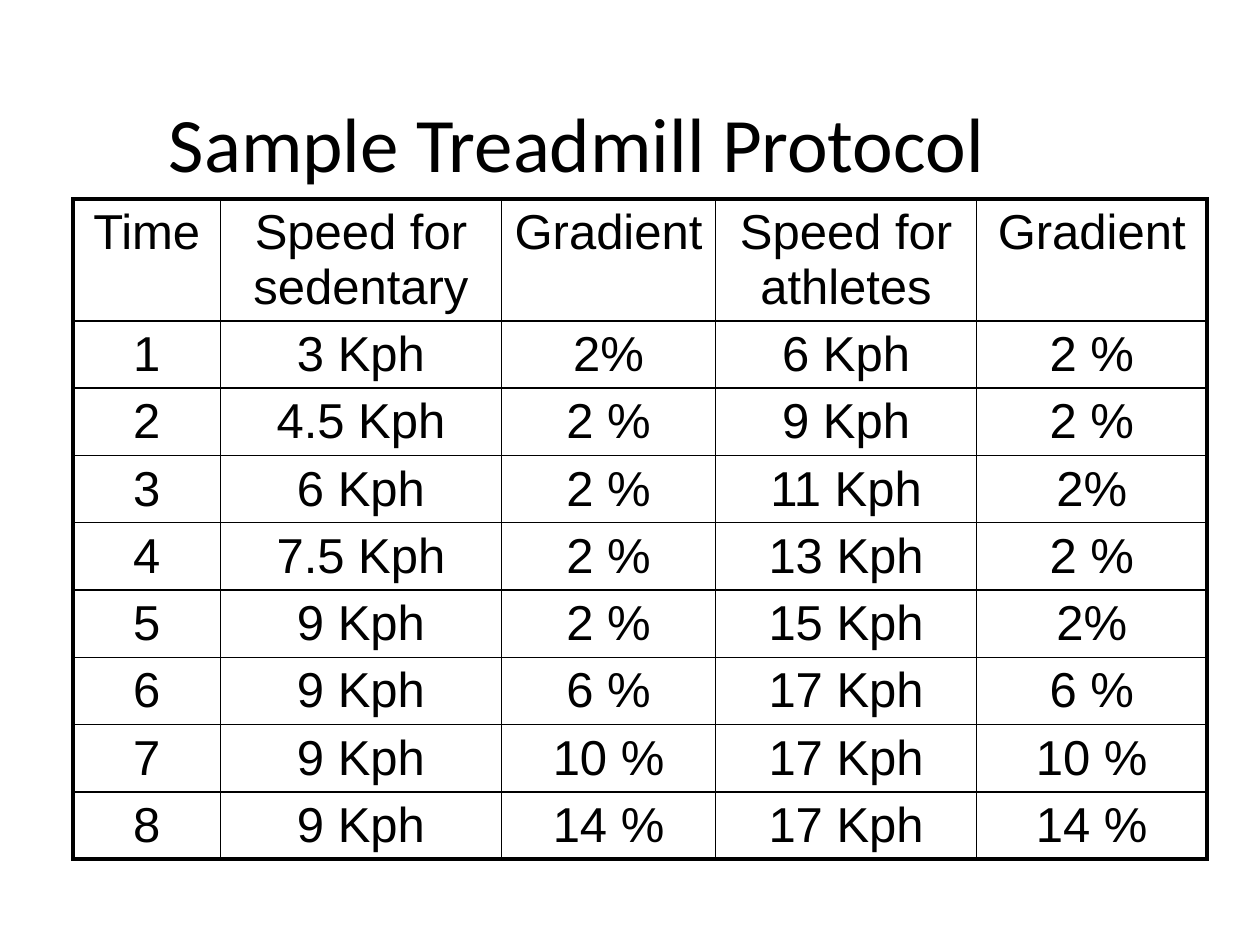
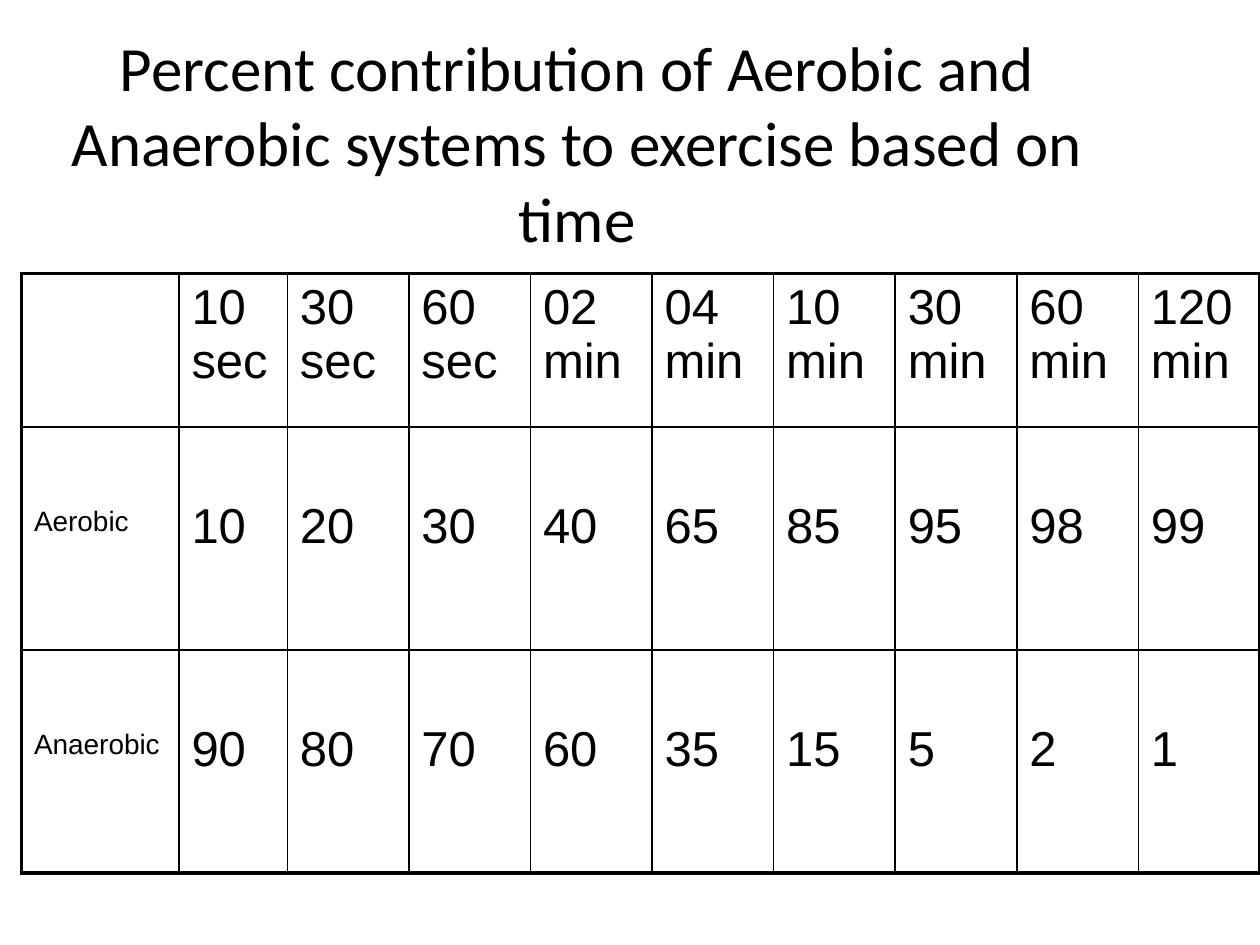
from lxml import etree
from pptx import Presentation
from pptx.dml.color import RGBColor
from pptx.enum.text import MSO_ANCHOR, MSO_AUTO_SIZE, PP_ALIGN
from pptx.oxml.ns import qn
from pptx.util import Inches, Pt

CENTER = PP_ALIGN.CENTER
LEFT = PP_ALIGN.LEFT
MIDDLE = MSO_ANCHOR.MIDDLE
NO_AUTOFIT = MSO_AUTO_SIZE.NONE
TITLE_ONLY = 5

BLACK = "000000"
WHITE = "FFFFFF"
TITLE_FONT = "Calibri"
TABLE_FONT = "Arial"
THICK = 2.25
THIN = 1

PROTOCOL = [
    ["Time", "Speed for sedentary", "Gradient", "Speed for athletes", "Gradient"],
    ["1", "3 Kph", "2%", "6 Kph", "2 %"],
    ["2", "4.5 Kph", "2 %", "9 Kph", "2 %"],
    ["3", "6 Kph", "2 %", "11 Kph", "2%"],
    ["4", "7.5 Kph", "2 %", "13 Kph", "2 %"],
    ["5", "9 Kph", "2 %", "15 Kph", "2%"],
    ["6", "9 Kph", "6 %", "17 Kph", "6 %"],
    ["7", "9 Kph", "10 %", "17 Kph", "10 %"],
    ["8", "9 Kph", "14 %", "17 Kph", "14 %"],
]

CONTRIBUTION = [
    ["", "10 sec", "30 sec", "60 sec", "02 min", "04 min", "10 min", "30 min", "60 min", "120 min"],
    ["Aerobic", "10", "20", "30", "40", "65", "85", "95", "98", "99"],
    ["Anaerobic", "90", "80", "70", "60", "35", "15", "5", "2", "1"],
]


def color(value):
    return RGBColor.from_string(value)


def write_text(text_frame, text, font=TABLE_FONT, size=28, fill=BLACK, align=LEFT):
    paragraph = text_frame.paragraphs[0]
    paragraph.alignment = align
    if text:
        run = paragraph.add_run()
        run.text = text
        run.font.name = font
        run.font.size = Pt(size)
        run.font.color.rgb = color(fill)


def draw_borders(cell, widths):
    properties = cell._tc.get_or_add_tcPr()
    for side, width in widths.items():
        line = etree.SubElement(properties, qn(f"a:ln{side}"), w=str(Pt(width)))
        fill = etree.SubElement(line, qn("a:solidFill"))
        etree.SubElement(fill, qn("a:srgbClr"), val=BLACK)


class Deck:
    def __init__(self):
        self.presentation = Presentation()
        self.presentation.slide_width = Inches(10)
        self.presentation.slide_height = Inches(7.5)
        self.slide = None

    def add_slide(self, title, title_size):
        layout = self.presentation.slide_layouts[TITLE_ONLY]
        self.slide = self.presentation.slides.add_slide(layout)
        background = self.slide.background.fill
        background.solid()
        background.fore_color.rgb = color(WHITE)
        shape = self.slide.shapes.title
        shape.left, shape.top = Inches(0.33), Inches(0.5)
        shape.width, shape.height = Inches(8.5), Inches(1.25)
        text_frame = shape.text_frame
        text_frame.word_wrap = True
        text_frame.auto_size = NO_AUTOFIT
        text_frame.vertical_anchor = MIDDLE
        write_text(text_frame, title, font=TITLE_FONT, size=title_size, align=CENTER)

    def add_table(self, left, top, column_widths, row_heights, rows, cell_format):
        row_count, column_count = len(rows), len(column_widths)
        table = self.slide.shapes.add_table(
            row_count, column_count, Inches(left), Inches(top),
            Inches(sum(column_widths)), Inches(sum(row_heights)),
        ).table
        table.first_row = False
        table.horz_banding = False
        for column, width in zip(table.columns, column_widths):
            column.width = Inches(width)
        for row, height in zip(table.rows, row_heights):
            row.height = Inches(height)
        for row_index, texts in enumerate(rows):
            for column_index, text in enumerate(texts):
                cell = table.cell(row_index, column_index)
                size, align, margin_top = cell_format(row_index, column_index)
                cell.margin_top = Inches(margin_top)
                write_text(cell.text_frame, text, size=size, align=align)
                draw_borders(cell, {
                    "L": THICK if column_index == 0 else THIN,
                    "R": THICK if column_index == column_count - 1 else THIN,
                    "T": THICK if row_index == 0 else THIN,
                    "B": THICK if row_index == row_count - 1 else THIN,
                })
                cell.fill.background()


def protocol_format(row_index, column_index):
    return 28, CENTER, 0.05


def contribution_format(row_index, column_index):
    if row_index == 0:
        return 28, LEFT, 0.05
    if column_index == 0:
        return 16, LEFT, 0.63
    return 28, LEFT, 0.57


def main():
    deck = Deck()

    deck.add_slide("Sample Treadmill Protocol", 44)
    deck.add_table(0.58, 1.58, [1.17, 2.23, 1.7, 2.07, 1.83],
                   [0.49] * len(PROTOCOL), PROTOCOL, protocol_format)

    deck.add_slide("Percent contribution of Aerobic and Anaerobic systems "
                   "to exercise based on time", 36)
    label_width, first_width, table_width = 1.25, 0.86, 9.83
    time_width = (table_width - label_width - first_width) / 8
    deck.add_table(0.17, 2.17, [label_width, first_width] + [time_width] * 8,
                   [1.22, 1.77, 1.77], CONTRIBUTION, contribution_format)

    deck.presentation.save("out.pptx")


if __name__ == "__main__":
    main()
